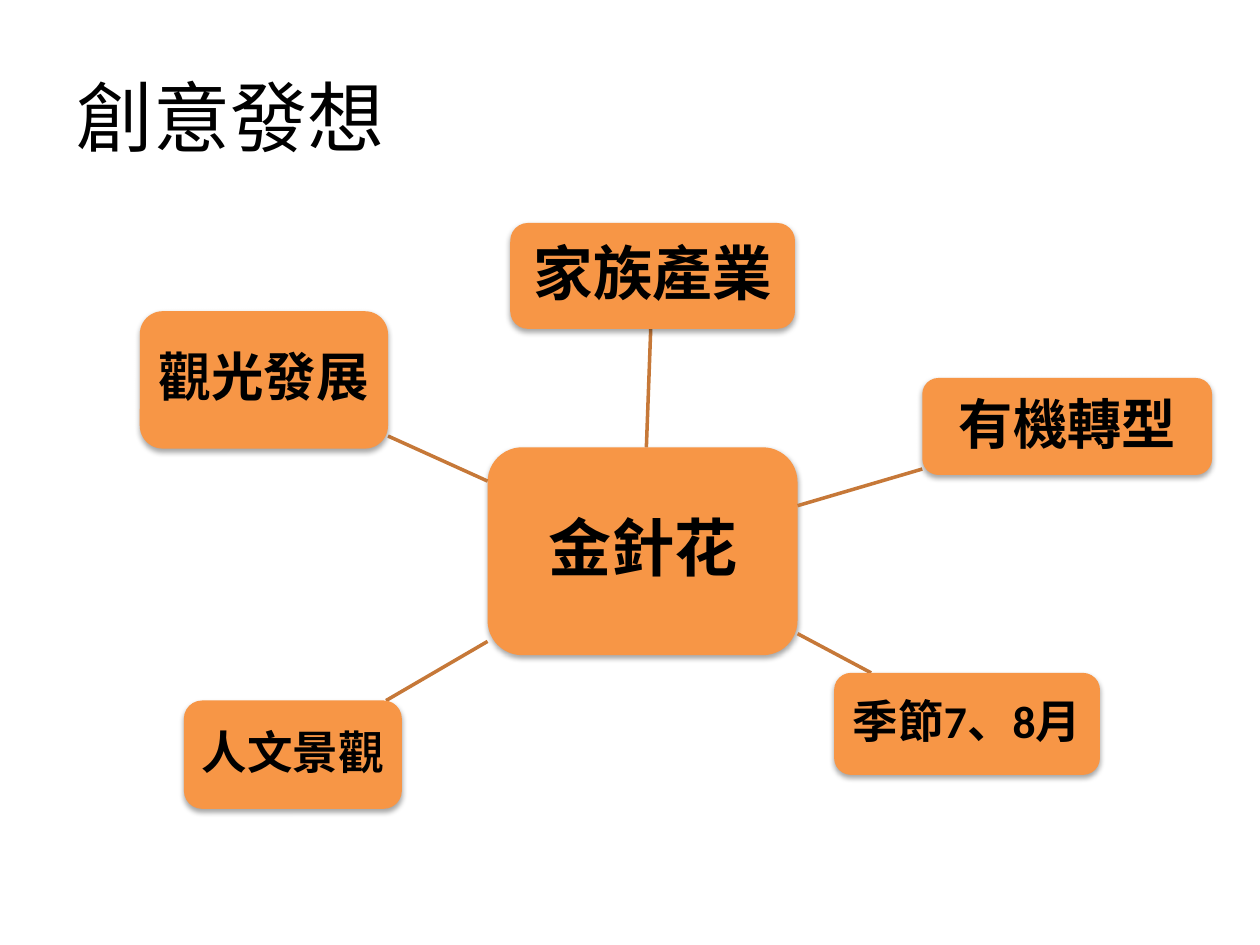
from lxml import etree
from pptx import Presentation
from pptx.dml.color import RGBColor
from pptx.enum.shapes import MSO_CONNECTOR, MSO_SHAPE
from pptx.enum.text import MSO_ANCHOR, PP_ALIGN
from pptx.oxml import parse_xml
from pptx.oxml.ns import qn
from pptx.util import Inches, Pt

ROUNDED = MSO_SHAPE.ROUNDED_RECTANGLE
STRAIGHT = MSO_CONNECTOR.STRAIGHT
MIDDLE = MSO_ANCHOR.MIDDLE
CENTER = PP_ALIGN.CENTER

FONT = "Calibri"
COLORS = {"node": "F79646", "line": "C67838", "text": "000000"}

# text, (left, top, width, height), font size, inset
HUB = ("金針花", (3.87, 3.55, 2.46, 1.65), 36, 0.1)
IDEAS = [
    ("家族產業", (4.05, 1.77, 2.26, 0.84), 34, 0.09),
    ("人文景觀", (1.46, 5.56, 1.73, 0.86), 26, 0.07),
    ("季節7、8月", (6.62, 5.34, 2.11, 0.81), 26, 0.07),
    ("有機轉型", (7.32, 3, 2.3, 0.77), 31, 0.09),
    ("觀光發展", (1.11, 2.47, 1.97, 1.09), 30, 0.08),
]

SHADOW = (
    '<a:effectLst xmlns:a="http://schemas.openxmlformats.org/drawingml/2006/main">'
    '<a:outerShdw blurRad="40000" dist="23000" dir="5400000" rotWithShape="0">'
    '<a:srgbClr val="000000"><a:alpha val="35000"/></a:srgbClr>'
    "</a:outerShdw></a:effectLst>"
)


def color(name):
    return RGBColor.from_string(COLORS[name])


def set_text(box, text, size, bold=False):
    frame = box.text_frame
    frame.word_wrap = True
    frame.vertical_anchor = MIDDLE
    para = frame.paragraphs[0]
    para.text = text
    para.font.name = FONT
    para.font.size = Pt(size)
    para.font.bold = bold
    para.font.color.rgb = color("text")
    return para


def add_title(page, text):
    box = page.shapes.add_textbox(Inches(0.51), Inches(0.29), Inches(9), Inches(1.25))
    set_text(box, text, 44)


def add_node(page, text, area, size, inset):
    node = page.shapes.add_shape(ROUNDED, *map(Inches, area))
    node.fill.solid()
    node.fill.fore_color.rgb = color("node")
    node.line.fill.background()
    node._element.spPr.append(parse_xml(SHADOW))
    frame = node.text_frame
    frame.margin_left = frame.margin_right = Inches(inset)
    frame.margin_top = frame.margin_bottom = Inches(inset)
    para = set_text(node, text, size, bold=True)
    para.alignment = CENTER
    para.line_spacing = 0.9
    para.space_after = Pt(round(size * 0.35))


def center(area):
    left, top, width, height = area
    return left + width / 2, top + height / 2


def edge_point(area, target):
    """Where the line from the area's center to the target leaves the area."""
    x, y = center(area)
    dx, dy = target[0] - x, target[1] - y
    scale = 1 / max(abs(dx) / (area[2] / 2), abs(dy) / (area[3] / 2))
    return x + dx * scale, y + dy * scale


def add_link(page, start_area, end_area):
    start = edge_point(start_area, center(end_area))
    end = edge_point(end_area, center(start_area))
    link = page.shapes.add_connector(STRAIGHT, *map(Inches, start + end))
    link.line.color.rgb = color("line")
    link.line.width = Pt(2)
    etree.SubElement(link._element.spPr, qn("a:effectLst"))


def main():
    deck = Presentation()
    deck.slide_width, deck.slide_height = Inches(10), Inches(7.5)
    page = deck.slides.add_slide(deck.slide_layouts[6])
    add_title(page, "創意發想")
    add_node(page, *HUB)
    for idea in IDEAS:
        add_link(page, HUB[1], idea[1])
        add_node(page, *idea)
    deck.save("out.pptx")


if __name__ == "__main__":
    main()
